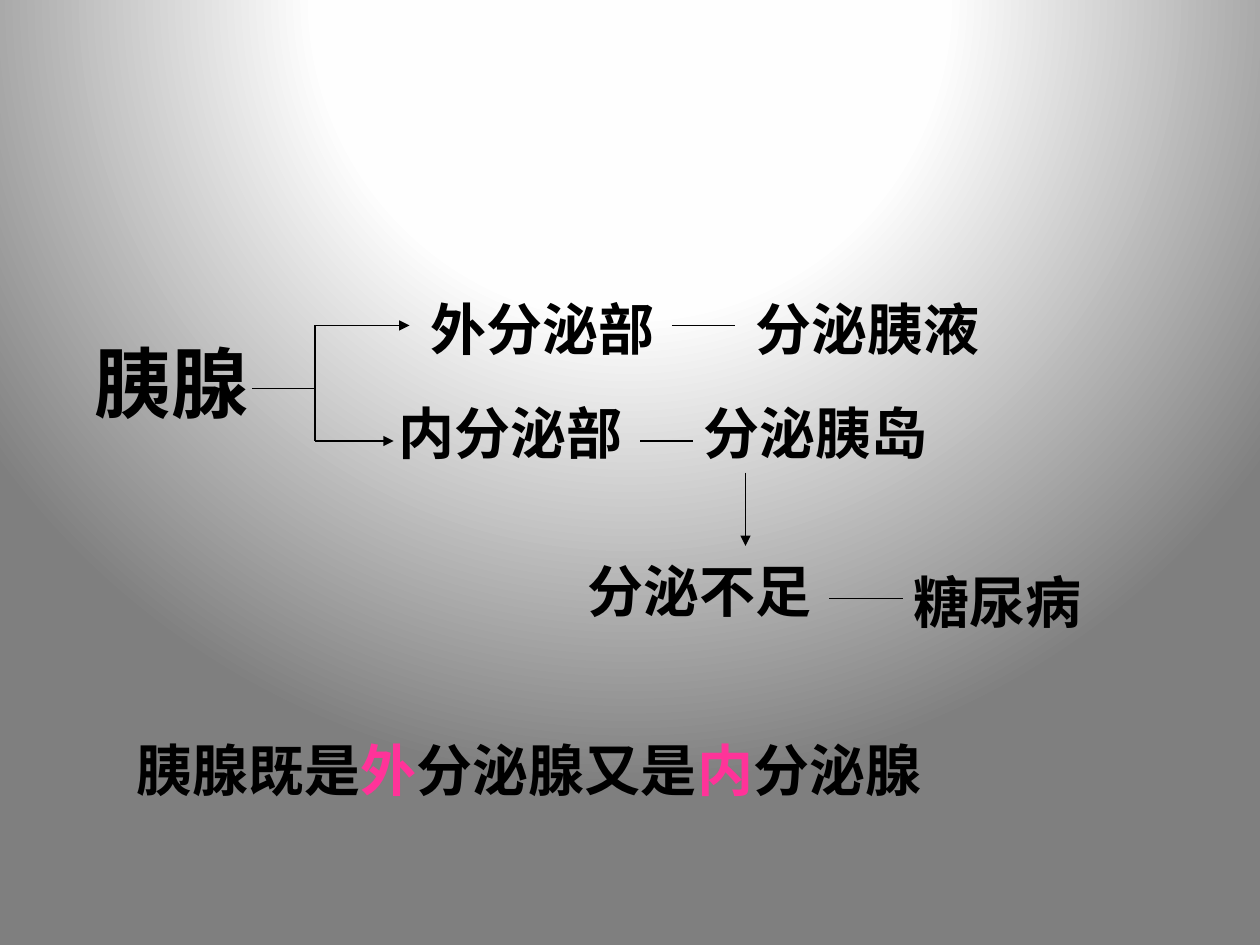
from dataclasses import dataclass

from lxml import etree
from pptx import Presentation
from pptx.dml.color import RGBColor
from pptx.enum import shapes, text
from pptx.oxml import parse_xml
from pptx.oxml.ns import nsdecls, qn
from pptx.util import Pt


@dataclass(frozen=True)
class Theme:
    font: str = "Times New Roman"
    title_size: float = 44
    body_size: float = 32
    line_width: float = 0.75
    ink: str = "000000"
    accent: str = "FF3399"
    glow: tuple = ((0, "FFFFFF"), (40, "FEFEFE"), (100, "7F7F7F"))


THEME = Theme()

# Rows of the diagram (line heights) and its left fork
EXOCRINE_Y, ENDOCRINE_Y, DEFICIT_Y = 186, 252, 342
FORK_X, FORK_Y = 180, 222


def set_background(page):
    """Radial glow centred above the top edge."""
    stops = "".join(
        f'<a:gs pos="{position * 1000}"><a:srgbClr val="{color}"/></a:gs>'
        for position, color in THEME.glow)
    page.element.cSld.insert(0, parse_xml(
        f'<p:bg {nsdecls("p", "a")}><p:bgPr><a:gradFill rotWithShape="0">'
        f'<a:gsLst>{stops}</a:gsLst><a:path path="circle">'
        '<a:fillToRect l="50000" t="-80000" r="50000" b="180000"/>'
        '</a:path></a:gradFill><a:effectLst/></p:bgPr></p:bg>'))


def add_label(page, left, top, width, words, size=THEME.body_size):
    """Bold label; words is a list of (text, color) spans."""
    box = page.shapes.add_textbox(Pt(left), Pt(top), Pt(width), Pt(size * 1.2))
    frame = box.text_frame
    frame.margin_left = frame.margin_right = 0
    frame.margin_top = frame.margin_bottom = 0
    frame.word_wrap = True
    frame.auto_size = text.MSO_AUTO_SIZE.SHAPE_TO_FIT_TEXT

    para = frame.paragraphs[0]
    para.font.name = THEME.font
    para.font.size = Pt(size)
    para.font.bold = True
    for content, color in words:
        span = para.add_run()
        span.text = content
        span.font.color.rgb = RGBColor.from_string(color)

    # Space before, as a share of the line
    space = parse_xml(f'<a:spcBef {nsdecls("a")}><a:spcPct val="50000"/></a:spcBef>')
    para._p.get_or_add_pPr().insert(0, space)


def add_line(parent, start, end, arrow=False):
    line = parent.shapes.add_connector(
        shapes.MSO_CONNECTOR.STRAIGHT, *map(Pt, start + end))
    line.line.width = Pt(THEME.line_width)
    line.line.color.rgb = RGBColor.from_string(THEME.ink)
    if arrow:
        etree.SubElement(line.line._get_or_add_ln(), qn("a:tailEnd"), type="triangle")
    etree.SubElement(line._element.spPr, qn("a:effectLst"))


def add_fork(page):
    fork = page.shapes.add_group_shape()
    add_line(fork, (FORK_X, EXOCRINE_Y), (234, EXOCRINE_Y), arrow=True)
    add_line(fork, (FORK_X, EXOCRINE_Y), (FORK_X, ENDOCRINE_Y))
    add_line(fork, (FORK_X, ENDOCRINE_Y), (225, ENDOCRINE_Y), arrow=True)
    add_line(fork, (144, FORK_Y), (FORK_X, FORK_Y))


def main():
    deck = Presentation()
    deck.slide_width, deck.slide_height = Pt(720), Pt(540)
    page = deck.slides.add_slide(deck.slide_layouts[6])
    set_background(page)

    # Root and its two branches
    add_label(page, 54, 192, 102, [("胰腺", THEME.ink)], THEME.title_size)
    add_fork(page)

    # Parts, their secretions and the disease
    for left, top, width, words in (
            (246, 168, 150, "外分泌部"),
            (432, 168, 150, "分泌胰液"),
            (228, 228, 150, "内分泌部"),
            (402, 228, 150, "分泌胰岛"),
            (336, 318, 138, "分泌不足"),
            (522, 324, 138, "糖尿病")):
        add_label(page, left, top, width, [(words, THEME.ink)])

    # Links between neighbours in a row
    for left, right, y in (
            (384, 420, EXOCRINE_Y),
            (366, 396, ENDOCRINE_Y),
            (474, 516, DEFICIT_Y)):
        add_line(page, (left, y), (right, y))
    add_line(page, (426, 270), (426, 312), arrow=True)

    # Conclusion
    add_label(page, 78, 420, 468, [
        ("胰腺既是", THEME.ink), ("外", THEME.accent), ("分泌腺又是", THEME.ink),
        ("内", THEME.accent), ("分泌腺", THEME.ink)])

    deck.save("out.pptx")


if __name__ == "__main__":
    main()
